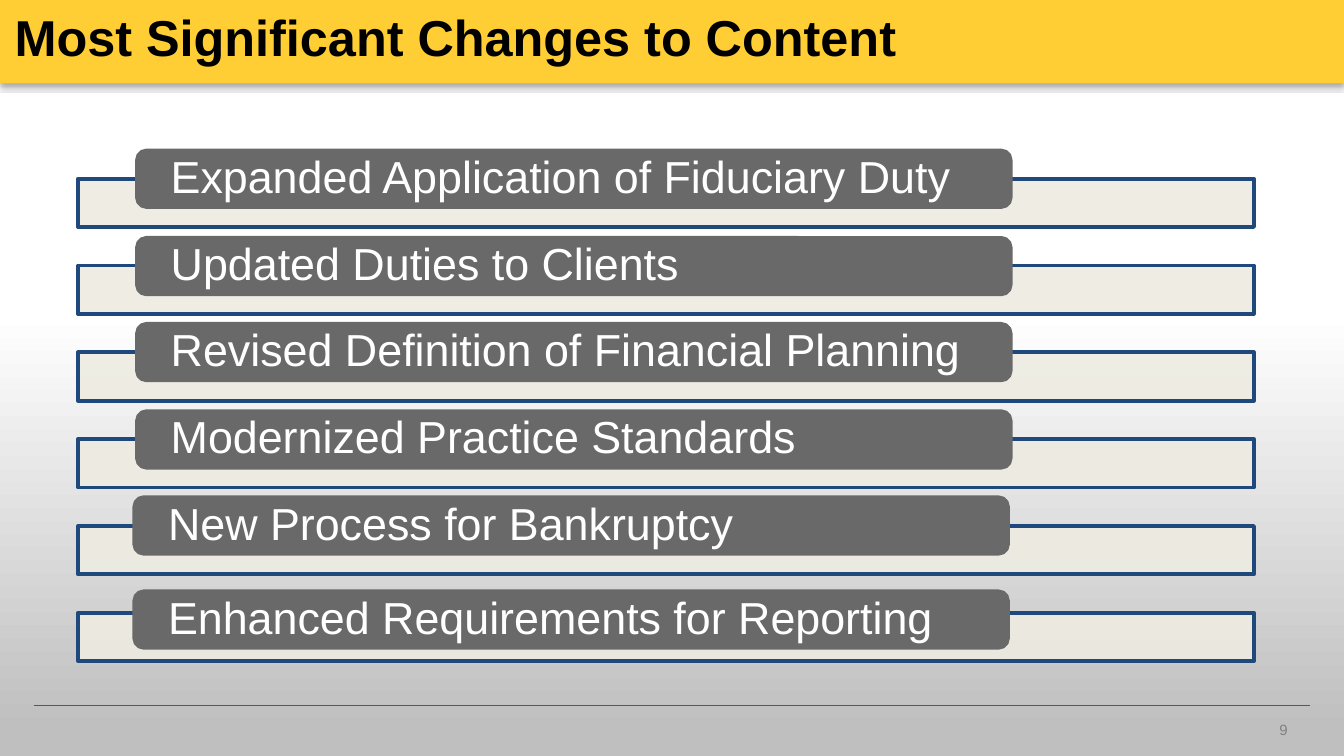
from lxml import etree
from pptx import Presentation
from pptx.dml.color import RGBColor
from pptx.enum import shapes, text
from pptx.oxml import ns
from pptx.util import Inches, Pt

rgb = RGBColor.from_string
A = ns.nsdecls("a")

prs = Presentation()
prs.slide_width = Inches(10)
prs.slide_height = prs.slide_width * 9 // 16
s = prs.slides.add_slide(prs.slide_layouts[6])


def add_box(kind, x, y, w, h, fill, line=None):
    sp = s.shapes.add_shape(kind, Inches(x), Inches(y), Inches(w), Inches(h))
    sp.shadow.inherit = False
    sp.fill.solid()
    sp.fill.fore_color.rgb = rgb(fill)
    if line:
        sp.line.color.rgb = rgb(line)
        sp.line.width = Pt(2)
    else:
        sp.line.fill.background()
    return sp


def add_run(tf, words, size, color, bold=False):
    p = tf.paragraphs[0]
    r = p.add_run()
    r.text = words
    r.font.name = "Arial"
    r.font.size = Pt(size)
    r.font.bold = bold
    r.font.color.rgb = rgb(color)
    return p


RECT = shapes.MSO_SHAPE.RECTANGLE
ROUND = shapes.MSO_SHAPE.ROUNDED_RECTANGLE

banner = add_box(RECT, 0, 0, 10, 0.62, "FFCE34")
panel = add_box(RECT, 0, 0.69, 10, 4.94, "FFFFFF")
panel.fill.gradient()
panel.fill.gradient_angle = 90
for stop, (pos, color) in zip(panel.fill.gradient_stops, [(0.04, "BFBFBF"), (0.67, "FFFFFF")]):
    stop.position = pos
    stop.color.rgb = rgb(color)

for sp in (banner, panel):
    effects = sp._element.spPr.find(ns.qn("a:effectLst"))
    effects.append(etree.fromstring(
        f'<a:outerShdw {A} blurRad="{Pt(3.1)}" dist="{Pt(1.8)}" dir="5400000" rotWithShape="0">'
        '<a:srgbClr val="000000"><a:alpha val="35000"/></a:srgbClr></a:outerShdw>'))

rule = s.shapes.add_connector(shapes.MSO_CONNECTOR.STRAIGHT,
                              Inches(0.25), Inches(5.25), Inches(9.75), Inches(5.25))
rule.line.color.rgb = rgb("595959")
rule.line.width = Pt(0.75)
etree.SubElement(rule._element.spPr, ns.qn("a:effectLst"))

title = s.shapes.add_textbox(Inches(0.01), Inches(0), Inches(7.42), Inches(0.56))
title.text_frame.word_wrap = True
add_run(title.text_frame, "Most Significant Changes to Content", 27, "000000", True)

changes = [
    ("Expanded Application of Fiduciary Duty", 1.02, 1.12),
    ("Updated Duties to Clients", 1.02, 1.77),
    ("Revised Definition of Financial Planning", 1.02, 2.41),
    ("Modernized Practice Standards", 1.02, 3.06),
    ("New Process for Bankruptcy", 1, 3.7),
    ("Enhanced Requirements for Reporting", 1, 4.4),
]
step = (4.56 - 1.33) / (len(changes) - 1)
for i, (words, x, y) in enumerate(changes):
    bar = add_box(RECT, 0.58, 1.33 + i * step, 8.75, 0.36, "EEECE1", "1F497D")
    color = bar.fill._xPr.find(ns.qn("a:solidFill"))[0]
    etree.SubElement(color, ns.qn("a:alpha"), val="90000")

    label = add_box(ROUND, x, y, 6.5, 0.42, "696969", "696969")
    tf = label.text_frame
    tf.word_wrap = True
    tf.vertical_anchor = text.MSO_ANCHOR.MIDDLE
    tf.margin_left = tf.margin_right = Inches(0.23)
    tf.margin_top = tf.margin_bottom = 0
    p = add_run(tf, words, 24, "FFFFFF")
    p.alignment = text.PP_ALIGN.LEFT
    p.line_spacing = 0.9

number = s.shapes.add_textbox(Inches(9.42), Inches(5.31), Inches(0.58), Inches(0.3))
number.text_frame.word_wrap = True
add_run(number.text_frame, "9", 8, "808080")

prs.save("out.pptx")
